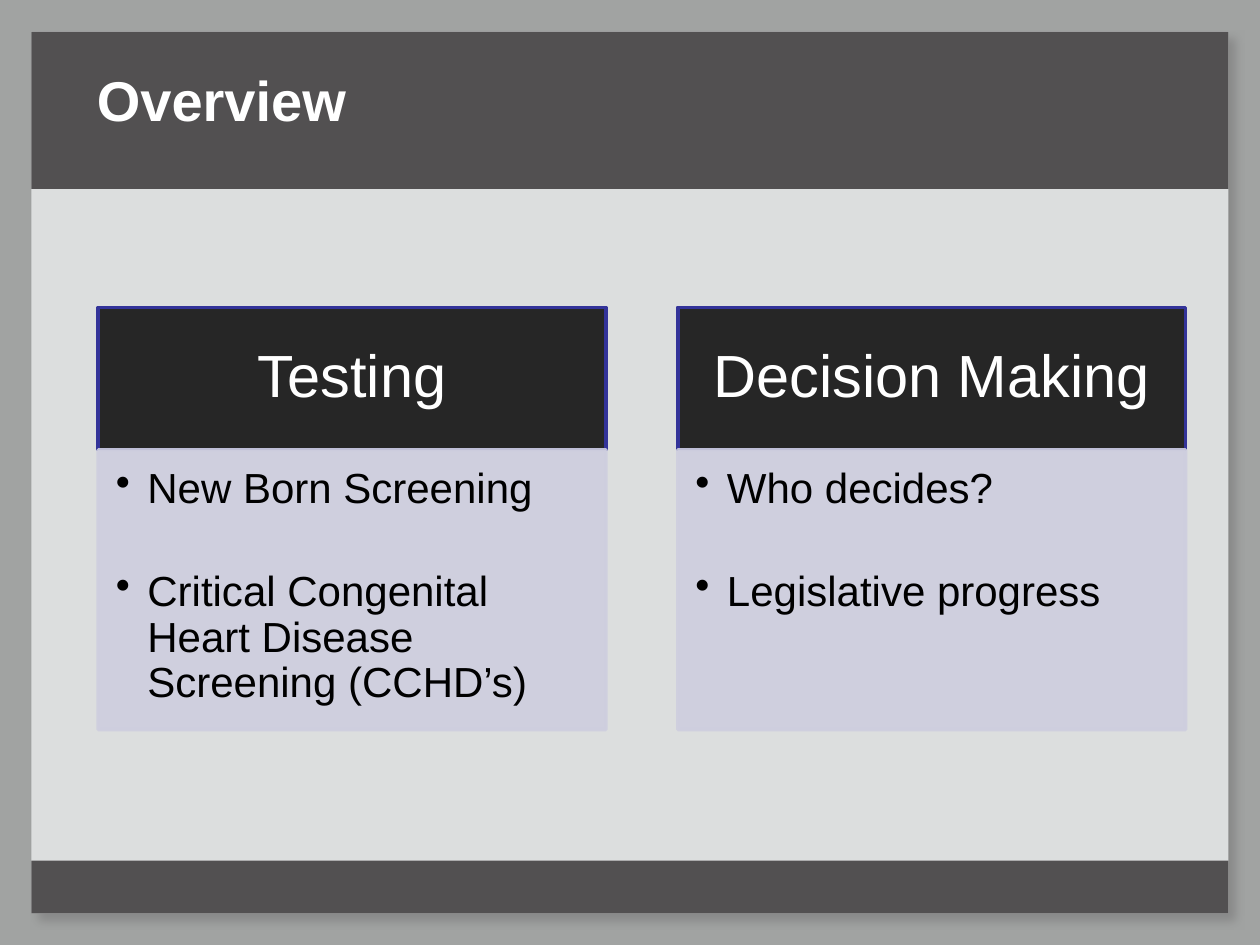
from dataclasses import dataclass

from pptx import Presentation
from pptx.dml.color import RGBColor
from pptx.enum.shapes import MSO_SHAPE
from pptx.enum.text import MSO_ANCHOR, PP_ALIGN
from pptx.oxml import parse_xml
from pptx.oxml.ns import nsdecls, qn
from pptx.util import Inches, Pt

RECT = MSO_SHAPE.RECTANGLE
TOP, MIDDLE = MSO_ANCHOR.TOP, MSO_ANCHOR.MIDDLE
LEFT, CENTER = PP_ALIGN.LEFT, PP_ALIGN.CENTER

GRAY = RGBColor(0xA1, 0xA3, 0xA2)
PALE = RGBColor(0xDC, 0xDE, 0xDE)
DARK = RGBColor(0x52, 0x50, 0x51)
INK = RGBColor(0x26, 0x26, 0x26)
BLUE = RGBColor(0x33, 0x33, 0x99)
LILAC = RGBColor(0xCE, 0xCE, 0xDE)
WHITE = RGBColor(0xFF, 0xFF, 0xFF)
BLACK = RGBColor(0, 0, 0)

FONT = "Arial"
INDENT = Inches(0.25)


@dataclass
class Box:
    left: float
    top: float
    width: float
    height: float

    def lengths(self) -> list:
        return [Inches(n) for n in (self.left, self.top, self.width, self.height)]


@dataclass
class Topic:
    name: str
    points: list[str]


TOPICS = [
    Topic("Testing", ["New Born Screening",
                      "Critical Congenital Heart Disease Screening (CCHD’s)"]),
    Topic("Decision Making", ["Who decides?", "Legislative progress"]),
]
START, STEP, WIDTH = 0.78, 4.6, 4.03
HEAD_TOP, HEAD_HIGH, BODY_HIGH = 2.44, 1.13, 2.22


def add_rect(slide, box: Box, fill: RGBColor, line: RGBColor | None = None):
    shape = slide.shapes.add_shape(RECT, *box.lengths())
    shape.shadow.inherit = False
    shape.fill.solid()
    shape.fill.fore_color.rgb = fill
    if line is None:
        shape.line.fill.background()
    else:
        shape.line.color.rgb = line
        shape.line.width = Pt(2)
    return shape


def add_shade(shape) -> None:
    """Cast a soft gray shadow down and to the right."""
    effects = shape._element.spPr.find(qn("a:effectLst"))
    effects.append(parse_xml(
        f'<a:outerShdw {nsdecls("a")} blurRad="{Pt(5)}" dist="{Pt(6)}" '
        'dir="2700000" algn="tl" rotWithShape="0"><a:srgbClr val="808080">'
        '<a:alpha val="75000"/></a:srgbClr></a:outerShdw>'))


def fade(shape, percent: int) -> None:
    """Set the opacity of the fill and the line."""
    for color in shape._element.spPr.iter(qn("a:srgbClr")):
        color.append(parse_xml(
            f'<a:alpha {nsdecls("a")} val="{percent * 1000}"/>'))


def set_frame(shape, anchor: MSO_ANCHOR, insets: tuple[float, ...]):
    frame = shape.text_frame
    frame.word_wrap = True
    frame.vertical_anchor = anchor
    (frame.margin_left, frame.margin_top,
     frame.margin_right, frame.margin_bottom) = map(Inches, insets)
    return frame


def style(para, size: int, color: RGBColor, align: PP_ALIGN = LEFT,
          bold: bool = False) -> None:
    para.alignment = align
    for run in para.runs:
        font = run.font
        font.name, font.size, font.bold = FONT, Pt(size), bold
        font.color.rgb = color


def add_bullet(para) -> None:
    props = para._p.get_or_add_pPr()
    props.set("marL", str(INDENT))
    props.set("indent", str(-INDENT))
    props.append(parse_xml(f'<a:buChar {nsdecls("a")} char="•"/>'))


def add_topic(slide, topic: Topic, left: float) -> None:
    head = add_rect(slide, Box(left, HEAD_TOP, WIDTH, HEAD_HIGH), INK, BLUE)
    frame = set_frame(head, MIDDLE, (0.26, 0.15, 0.26, 0.15))
    frame.text = topic.name
    frame.paragraphs[0].line_spacing = 0.9
    style(frame.paragraphs[0], 34, WHITE, CENTER)

    body = add_rect(slide, Box(left, HEAD_TOP + HEAD_HIGH, WIDTH, BODY_HIGH),
                    LILAC, LILAC)
    fade(body, 90)
    frame = set_frame(body, TOP, (0.14, 0.14, 0.19, 0.21))
    frame.text = "\n".join(topic.points)
    for i, para in enumerate(frame.paragraphs):
        para.level = 1
        para.line_spacing = 0.9
        para.space_before = Pt(33 if i else 0)
        style(para, 24, BLACK)
        add_bullet(para)


def main() -> None:
    deck = Presentation()
    deck.slide_width, deck.slide_height = Inches(10), Inches(7.5)
    slide = deck.slides.add_slide(deck.slide_layouts[6])
    slide.background.fill.solid()
    slide.background.fill.fore_color.rgb = GRAY

    add_shade(add_rect(slide, Box(0.25, 0.25, 9.5, 7), PALE))
    add_rect(slide, Box(0.25, 6.83, 9.5, 0.42), DARK)
    add_rect(slide, Box(0.25, 0.25, 9.5, 1.25), DARK)

    title = slide.shapes.add_textbox(*Box(0.67, 0.25, 8.92, 1.08).lengths())
    frame = set_frame(title, MIDDLE, (0.1, 0.05, 0.1, 0.05))
    frame.text = "Overview"
    style(frame.paragraphs[0], 32, WHITE, bold=True)

    for i, topic in enumerate(TOPICS):
        add_topic(slide, topic, START + i * STEP)

    deck.save("out.pptx")


if __name__ == "__main__":
    main()
